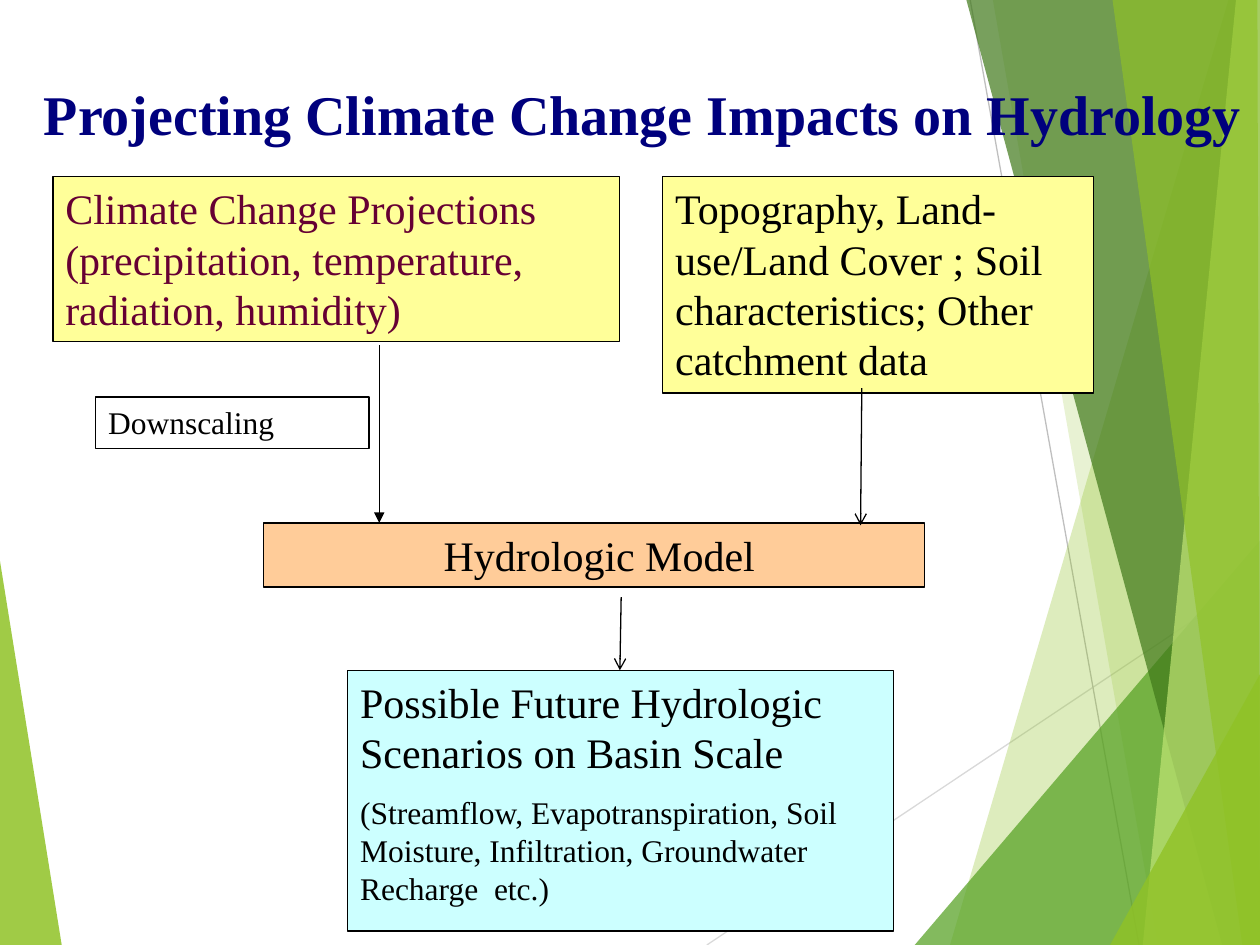
"""Build the slide on projecting climate change impacts on hydrology."""
from dataclasses import dataclass
from typing import NamedTuple, Optional

from lxml.etree import SubElement
from pptx import Presentation
from pptx.dml.color import RGBColor
from pptx.enum.shapes import MSO_CONNECTOR as Connector, MSO_SHAPE as Preset
from pptx.enum.text import MSO_ANCHOR as Anchor, PP_ALIGN as Align
from pptx.oxml.ns import qn
from pptx.util import Emu, Inches, Pt

COLUMNS, ROWS = 100, 75
WIDTH, HEIGHT = Inches(10), Inches(7.5)


@dataclass(frozen=True)
class Theme:
    font: str = "Times New Roman"
    title_size: int = 32
    large: int = 24
    small: int = 18
    rule: float = 0.75
    ink: str = "000000"
    navy: str = "00007D"
    plum: str = "660033"
    yellow: str = "FFFF99"
    peach: str = "FFCC99"
    aqua: str = "CCFFFF"
    green: str = "90C226"
    lime: str = "C0E474"
    leaf: str = "54A021"
    forest: str = "3F7819"
    pale_gray: str = "D9D9D9"
    gray: str = "BFBFBF"


THEME = Theme()


class Facet(NamedTuple):
    corners: tuple
    color: str
    opacity: int


class Line(NamedTuple):
    start: tuple
    end: tuple
    color: str = THEME.ink
    head: Optional[str] = None


class Passage(NamedTuple):
    text: str
    size: int = THEME.large
    color: str = THEME.ink
    bold: bool = False


class Box(NamedTuple):
    area: tuple
    passages: tuple
    fill: Optional[str] = None
    align: Align = Align.LEFT
    inset: float = 1


FACETS_BEHIND = (
    Facet(((-0.1, 43.9), (4.9, 75), (-0.1, 75)), THEME.green, 85),
)
RAYS = (
    Line((56.1, 75), (100, 45.7), THEME.pale_gray),
    Line((77, 0), (90.4, 75), THEME.gray),
)
FACETS = (
    Facet(((97.5, 0), (75.4, 75), (100, 75), (100, 0)), THEME.green, 30),
    Facet(((78.8, 0), (91.9, 75), (100, 75), (100, 0)), THEME.green, 20),
    Facet(((72.6, 75), (100, 42.9), (100, 75)), THEME.leaf, 72),
    Facet(((76.7, 0), (97, 75), (100, 75), (100, 0)), THEME.forest, 70),
    Facet(((98.1, 0), (90.7, 75), (100, 75), (100, 0)), THEME.lime, 70),
    Facet(((88.3, 0), (98.6, 75), (100, 75), (99.8, 0)), THEME.green, 65),
    Facet(((88.1, 75), (100, 53.5), (100, 75)), THEME.green, 80),
)
BOXES = (
    Box((4.2, 14, 45, 13.1), (Passage(
        "Climate Change Projections (precipitation, temperature, "
        "radiation, humidity)", color=THEME.plum),), THEME.yellow),
    Box((52.6, 14, 34.2, 17.2), (Passage(
        "Topography, Land-use/Land Cover ; Soil characteristics; "
        "Other catchment data"),), THEME.yellow),
    Box((20.9, 41.5, 52.5, 5.1), (Passage("Hydrologic Model"),),
        THEME.peach, Align.CENTER, 1.8),
    Box((27.6, 53.2, 43.3, 20.7), (
        Passage("Possible Future Hydrologic Scenarios on Basin Scale"),
        Passage("(Streamflow, Evapotranspiration, Soil Moisture, Infiltration, "
                "Groundwater Recharge  etc.)", THEME.small)), THEME.aqua),
    Box((7.6, 31.5, 21.7, 4.1), (Passage("Downscaling", THEME.small),)),
)
TITLE = Box((2.5, 5.8, 97.5, 6.3), (Passage(
    "Projecting Climate Change Impacts on Hydrology",
    THEME.title_size, THEME.navy, True),))
ARROWS = (
    Line((30.1, 27.4), (30.1, 41.5), head="triangle"),
    Line((49.3, 47.4), (49.2, 53.2), head="arrow"),
    Line((68.4, 30.8), (68.3, 41.7), head="arrow"),
)


def across(columns: float) -> Emu:
    """Turn grid columns into a length."""
    return Emu(round(WIDTH * columns / COLUMNS))


def down(rows: float) -> Emu:
    """Turn grid rows into a length."""
    return Emu(round(HEIGHT * rows / ROWS))


def place(area: tuple) -> tuple:
    """Turn a grid area into left, top, width and height."""
    left, top, width, height = area
    return across(left), down(top), across(width), down(height)


def draw_facet(slide, facet: Facet) -> None:
    """Draw one translucent polygon of the backdrop."""
    first, *others = [(across(x), down(y)) for x, y in facet.corners]
    outline = slide.shapes.build_freeform(*first, scale=1.0)
    outline.add_line_segments(others, close=True)
    pane = outline.convert_to_shape()
    pane.shadow.inherit = False
    pane.line.fill.background()
    pane.fill.solid()
    pane.fill.fore_color.rgb = RGBColor.from_string(facet.color)
    tint = next(pane.fill._xPr.iter(qn("a:srgbClr")))
    SubElement(tint, qn("a:alpha"), val=str(facet.opacity * 1000))


def draw_line(slide, line: Line) -> None:
    """Draw a thin line, with an arrowhead where one is named."""
    (x1, y1), (x2, y2) = line.start, line.end
    stroke = slide.shapes.add_connector(
        Connector.STRAIGHT, across(x1), down(y1), across(x2), down(y2))
    stroke.line.width = Pt(THEME.rule)
    stroke.line.color.rgb = RGBColor.from_string(line.color)
    if line.head:
        SubElement(stroke.line._get_or_add_ln(), qn("a:tailEnd"), type=line.head)
    SubElement(stroke._element.spPr, qn("a:effectLst"))


def write(frame, box: Box) -> None:
    """Write the passages of a box into its text frame."""
    frame.word_wrap = True
    frame.vertical_anchor = Anchor.TOP
    frame.margin_left = across(box.inset)
    frame.text = "\n".join(passage.text for passage in box.passages)
    for index, (paragraph, passage) in enumerate(zip(frame.paragraphs, box.passages)):
        paragraph.alignment = box.align
        if index:
            paragraph.space_before = Pt(passage.size / 2)
        font = paragraph.runs[0].font
        font.name, font.size, font.bold = THEME.font, Pt(passage.size), passage.bold
        font.color.rgb = RGBColor.from_string(passage.color)


def draw_box(slide, box: Box) -> None:
    """Draw a bordered step of the flow chart."""
    step = slide.shapes.add_shape(Preset.RECTANGLE, *place(box.area))
    step.shadow.inherit = False
    step.line.width = Pt(THEME.rule)
    step.line.color.rgb = RGBColor.from_string(THEME.ink)
    if box.fill:
        step.fill.solid()
        step.fill.fore_color.rgb = RGBColor.from_string(box.fill)
    else:
        step.fill.background()
    write(step.text_frame, box)


def main() -> None:
    """Build and save the slide."""
    deck = Presentation()
    deck.slide_width, deck.slide_height = WIDTH, HEIGHT
    slide = deck.slides.add_slide(deck.slide_layouts[6])
    layers = ((draw_facet, FACETS_BEHIND), (draw_line, RAYS),
              (draw_facet, FACETS), (draw_box, BOXES), (draw_line, ARROWS))
    for draw, items in layers:
        for item in items:
            draw(slide, item)
    write(slide.shapes.add_textbox(*place(TITLE.area)).text_frame, TITLE)
    deck.save("out.pptx")


if __name__ == "__main__":
    main()
